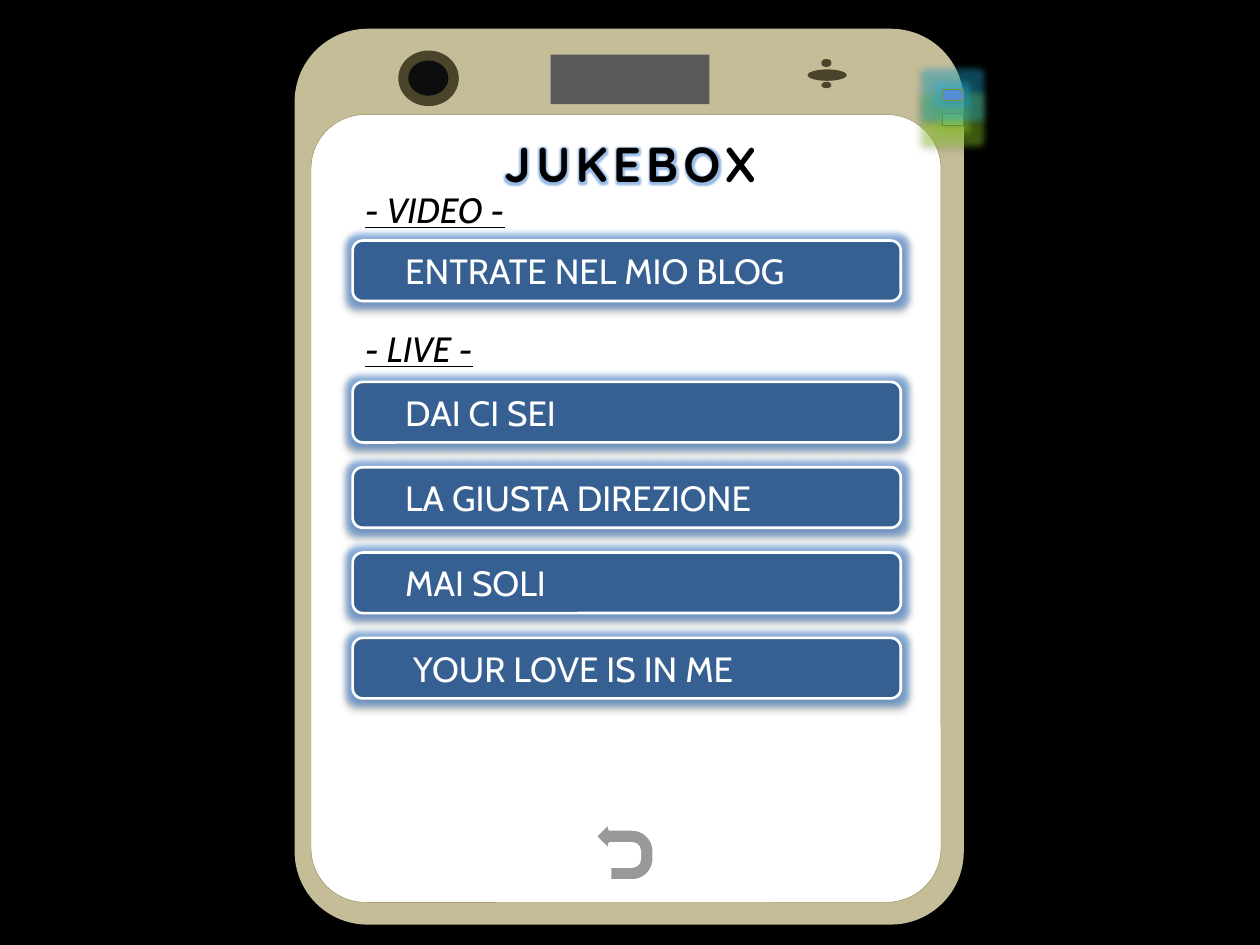
import pptx
import pptx.util
import pptx.dml.color
import pptx.enum.shapes
import pptx.enum.text
import lxml.etree

Cm, Pt = pptx.util.Cm, pptx.util.Pt
SHAPE = pptx.enum.shapes.MSO_SHAPE
ALIGN = pptx.enum.text.PP_ALIGN
ANCHOR = pptx.enum.text.MSO_ANCHOR
DRAWING = "http://schemas.openxmlformats.org/drawingml/2006/main"

THEME = {
    "night": "000000", "case": "C4BD97", "case_edge": "948A54", "speaker": "4A452A",
    "lens": "0D0D0D", "screen": "FFFFFF", "ink": "000000", "plate": "595959",
    "button": "376092", "button_ink": "FFFFFF", "button_glow": "558ED5",
    "key_line": "77933C", "display": "Quicksand", "text": "Cabin",
    "title_size": 28, "item_size": 20,
}

# Each section: heading, top of heading, top of first button, songs (cm)
SECTIONS = [
    ("- VIDEO -", 3.68, 4.85, ["ENTRATE NEL MIO BLOG"]),
    ("- LIVE -", 6.48, 7.7,
     ["DAI CI SEI", "LA GIUSTA DIREZIONE", "MAI SOLI", " YOUR LOVE IS IN ME"]),
]
LIST_LEFT, BUTTON_WIDTH, BUTTON_HEIGHT, BUTTON_STEP = 7.11, 11.05, 1.22, 1.72
CASE = (5.94, 0.58, 13.49, 18.06)
PLATE = (11.1, 1.1, 3.2, 1)
SCREEN = (6.27, 2.31, 12.7, 15.88)
# Ellipses on the case: box in cm, colour
FITTINGS = [
    ((16.28, 1.4, 0.79, 0.23), THEME["speaker"]),
    *[((16.56, top, 0.2, 0.13), THEME["speaker"]) for top in (1.19, 1.65, 1.22)],
    ((8.03, 1.02, 1.22, 1.12), THEME["speaker"]),
    ((8.23, 1.22, 0.81, 0.71), THEME["lens"]),
]
# Side keys: top in cm, fill, glow
SIDE_KEYS = [(2.29, "92D050", "9BDD2A"), (1.8, "558ED5", "24B6DE")]


def rgb(value):
    return pptx.dml.color.RGBColor.from_string(value)


def add_effect(parent, tag, colour, alpha, **attributes):
    effect = lxml.etree.SubElement(parent, f"{{{DRAWING}}}{tag}", attributes)
    tint = lxml.etree.SubElement(effect, f"{{{DRAWING}}}srgbClr", val=colour)
    lxml.etree.SubElement(tint, f"{{{DRAWING}}}alpha", val=str(alpha * 1000))


def add_glow(parent, colour, points, alpha):
    add_effect(parent, "glow", colour, alpha, rad=str(Pt(points)))


def add_box(shapes, kind, box, fill, line=None, width=0, corner=None, glow=None):
    """Add a filled preset shape; glow is (colour, points, alpha) and brings a shadow."""
    shape = shapes.add_shape(kind, *map(Cm, box))
    shape.shadow.inherit = False
    shape.fill.solid()
    shape.fill.fore_color.rgb = rgb(fill)
    if line:
        shape.line.color.rgb = rgb(line)
        shape.line.width = Pt(width)
    else:
        shape.line.fill.background()
    if corner is not None:
        shape.adjustments[0] = corner
    if glow:
        effects = shape._element.spPr.find(f"{{{DRAWING}}}effectLst")
        add_glow(effects, *glow)
        add_effect(effects, "outerShdw", "000000", 38, blurRad=str(Pt(3.1)),
                   dist=str(Pt(1.6)), dir="5400000", rotWithShape="0")
    return shape


def write(shape, text, font, size, colour, align=ALIGN.LEFT, anchor=ANCHOR.TOP,
          bold=False, italic=False, underline=False, spacing=0, glow=None,
          indent=0.25, gap=0):
    frame = shape.text_frame
    frame.word_wrap = True
    frame.auto_size = pptx.enum.text.MSO_AUTO_SIZE.NONE
    frame.vertical_anchor = anchor
    frame.margin_left, frame.margin_right = Cm(indent), Cm(0.25)
    frame.margin_top = frame.margin_bottom = Cm(0.13)
    para = frame.paragraphs[0]
    para.alignment = align
    para.space_before = para.space_after = Pt(gap)
    span = para.add_run()
    span.text = text
    span.font.size, span.font.bold = Pt(size), bold
    span.font.italic, span.font.underline = italic, underline
    span.font.color.rgb = rgb(colour)
    span.font.name = font
    properties = span._r.get_or_add_rPr()
    if spacing:
        properties.set("spc", str(int(spacing * 100)))
    if glow:
        effects = lxml.etree.Element(f"{{{DRAWING}}}effectLst")
        add_glow(effects, *glow)
        properties.find(f"{{{DRAWING}}}solidFill").addnext(effects)


def draw_phone(page):
    phone = page.shapes.add_group_shape().shapes
    add_box(phone, SHAPE.ROUNDED_RECTANGLE, CASE, THEME["case"], corner=0.109)
    add_box(phone, SHAPE.RECTANGLE, PLATE, THEME["plate"])
    add_box(phone, SHAPE.ROUNDED_RECTANGLE, SCREEN, THEME["screen"],
            line=THEME["case_edge"], width=0.25, corner=0.086)
    for box, colour in FITTINGS:
        add_box(phone, SHAPE.OVAL, box, colour)
    for top, fill, glow in SIDE_KEYS:
        add_box(phone, SHAPE.RECTANGLE, (19, top, 0.41, 0.23), fill,
                line=THEME["key_line"], width=0.25, glow=(glow, 8, 40))


def draw_title(page):
    title = page.shapes.title
    title.left, title.top, title.width, title.height = map(Cm, (9.68, 2.57, 6.05, 1.45))
    write(title, "JUKEBOX", THEME["display"], THEME["title_size"], THEME["ink"],
          align=ALIGN.CENTER, bold=True, spacing=3, glow=(THEME["button_glow"], 4, 60))
    page.shapes._spTree.append(title._element)  # in front of the phone


def draw_sections(page):
    for heading, heading_top, first_top, songs in SECTIONS:
        label = page.shapes.add_textbox(*map(Cm, (LIST_LEFT, heading_top, 5.21, 1.12)))
        write(label, heading, THEME["text"], THEME["item_size"], THEME["ink"],
              italic=True, underline=True)
        for row, song in enumerate(songs):
            box = (LIST_LEFT, first_top + row * BUTTON_STEP, BUTTON_WIDTH, BUTTON_HEIGHT)
            button = add_box(page.shapes, SHAPE.ROUNDED_RECTANGLE, box, THEME["button"],
                             line=THEME["screen"], width=1.5,
                             glow=(THEME["button_glow"], 7, 60))
            write(button, song, THEME["text"], THEME["item_size"], THEME["button_ink"],
                  anchor=ANCHOR.MIDDLE, indent=1, gap=6)


def main():
    deck = pptx.Presentation()
    deck.slide_width, deck.slide_height = Cm(25.4), Cm(19.05)
    page = deck.slides.add_slide(deck.slide_layouts[5])
    page.background.fill.solid()
    page.background.fill.fore_color.rgb = rgb(THEME["night"])
    draw_phone(page)
    draw_title(page)
    draw_sections(page)
    back = add_box(page.shapes, SHAPE.ACTION_BUTTON_RETURN, (11.79, 16.26, 1.6, 1.8),
                   THEME["screen"], line=THEME["screen"], width=2)
    back.rotation = 270
    deck.save("out.pptx")


if __name__ == "__main__":
    main()
